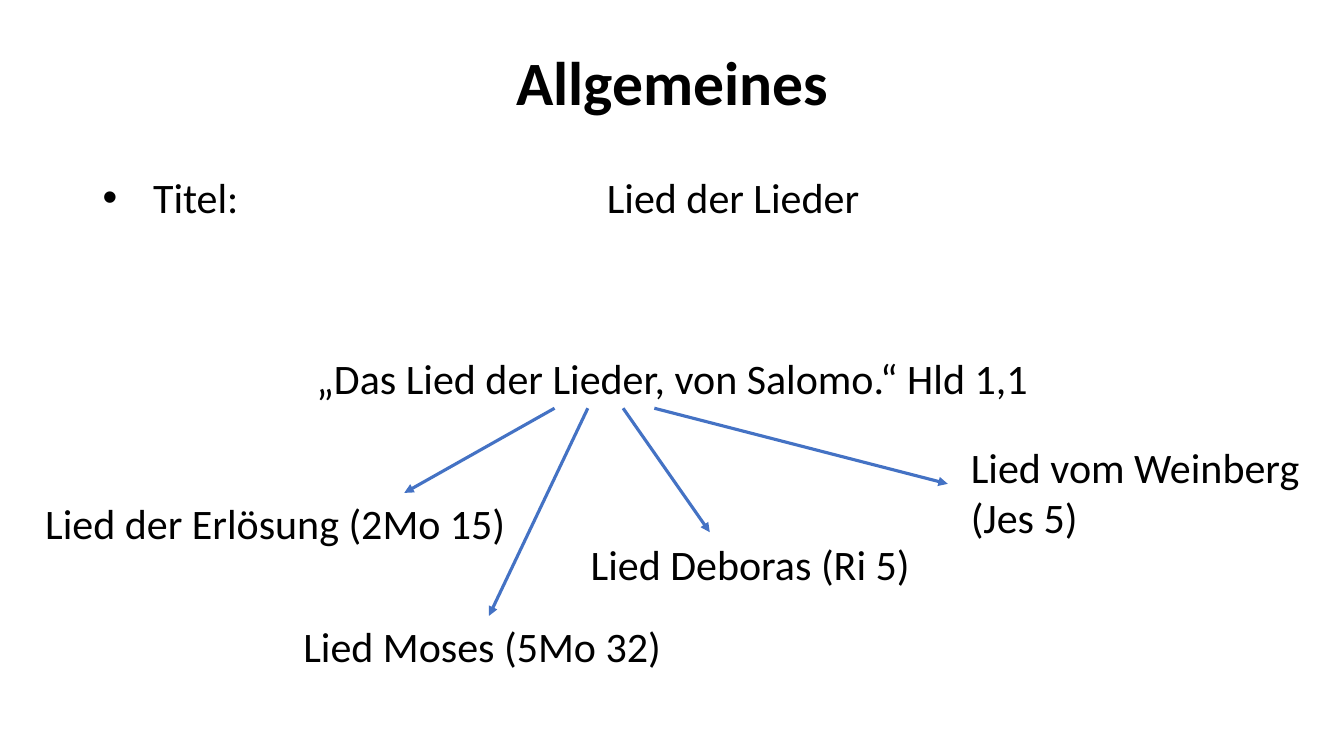
import pptx
import pptx.dml.color
import pptx.enum.shapes
import pptx.enum.text
import pptx.oxml
import pptx.oxml.ns
import pptx.util

SLIDE_SIZE = (13.33, 7.5)
FONT = "Calibri"
BLACK = "000000"
ARROW_BLUE = "4472C4"
BODY_SIZE = 30
ARROW_TOP = 4.05

# Song lines, box (left, top, width, height), arrow start x, arrow tip
SONGS = [
    (["Lied der Erlösung (2Mo 15)"], (0.35, 4.89, 4.78, 0.61), 5.5, (4.01, 4.89)),
    (["Lied Moses (5Mo 32)"], (2.91, 6.11, 3.76, 0.61), 5.83, (4.85, 6.11)),
    (["Lied Deboras (Ri 5)"], (5.76, 5.29, 3.42, 0.61), 6.18, (7.04, 5.28)),
    (["Lied vom Weinberg", "(Jes 5)"], (9.53, 4.33, 3.55, 1.11), 6.49, (9.4, 4.8)),
]


def color(value):
    return pptx.dml.color.RGBColor.from_string(value)


def drawing_element(tag, **attributes):
    element = pptx.oxml.parse_xml(f'<a:{tag} {pptx.oxml.ns.nsdecls("a")}/>')
    for name, value in attributes.items():
        element.set(name, value)
    return element


def add_text(slide, box, lines, size=BODY_SIZE, bold=False):
    """Add a wrapped text box with one paragraph per line and return its frame."""
    shape = slide.shapes.add_textbox(*map(pptx.util.Inches, box))
    frame = shape.text_frame
    frame.word_wrap = True
    frame.auto_size = pptx.enum.text.MSO_AUTO_SIZE.SHAPE_TO_FIT_TEXT
    for index, line in enumerate(lines):
        paragraph = frame.add_paragraph() if index else frame.paragraphs[0]
        run = paragraph.add_run()
        run.text = line
        run.font.name = FONT
        run.font.size = pptx.util.Pt(size)
        run.font.bold = bold
        run.font.color.rgb = color(BLACK)
    return frame


def add_title(slide, box):
    frame = add_text(slide, box, ["Allgemeines"], size=44, bold=True)
    frame.auto_size = pptx.enum.text.MSO_AUTO_SIZE.NONE
    frame.vertical_anchor = pptx.enum.text.MSO_ANCHOR.MIDDLE
    frame.paragraphs[0].alignment = pptx.enum.text.PP_ALIGN.CENTER
    frame.paragraphs[0].line_spacing = 0.9


def add_bullet(slide, box):
    """Add the bulleted book title, set out on one-inch tab stops."""
    frame = add_text(slide, box, ["Titel:\t\t\t\tLied der Lieder"])
    frame.auto_size = pptx.enum.text.MSO_AUTO_SIZE.NONE
    paragraph = frame.paragraphs[0]
    paragraph.line_spacing = 0.9
    paragraph.space_before = pptx.util.Pt(10)
    properties = paragraph._p.get_or_add_pPr()
    indent = pptx.util.Inches(0.5)
    properties.set("marL", str(indent))
    properties.set("indent", str(-indent))
    properties.set("defTabSz", str(pptx.util.Inches(1)))
    properties.append(drawing_element("buFont", typeface="Arial"))
    properties.append(drawing_element("buChar", char="•"))


def add_arrow(slide, start, tip):
    arrow = slide.shapes.add_connector(
        pptx.enum.shapes.MSO_CONNECTOR.STRAIGHT, *map(pptx.util.Inches, start + tip)
    )
    arrow.line.color.rgb = color(ARROW_BLUE)
    arrow.line.width = pptx.util.Pt(2.25)
    arrow.line._get_or_add_ln().append(drawing_element("tailEnd", type="triangle"))
    arrow._element.spPr.append(drawing_element("effectLst"))


def add_songs(slide, quote_box):
    """Add the verse with an arrow from it to each song."""
    add_text(slide, quote_box, ["„Das Lied der Lieder, von Salomo.“ Hld 1,1"])
    for lines, box, start_x, tip in SONGS:
        add_arrow(slide, (start_x, ARROW_TOP), tip)
        add_text(slide, box, lines)


def main():
    presentation = pptx.Presentation()
    presentation.slide_width, presentation.slide_height = map(pptx.util.Inches, SLIDE_SIZE)
    slide = presentation.slides.add_slide(presentation.slide_layouts[6])
    add_bullet(slide, (0.92, 1.71, 12.07, 1.15))
    add_title(slide, (0.92, 0.4, 11.5, 0.89))
    add_songs(slide, (3.04, 3.45, 7.26, 0.61))
    presentation.save("out.pptx")


if __name__ == "__main__":
    main()
